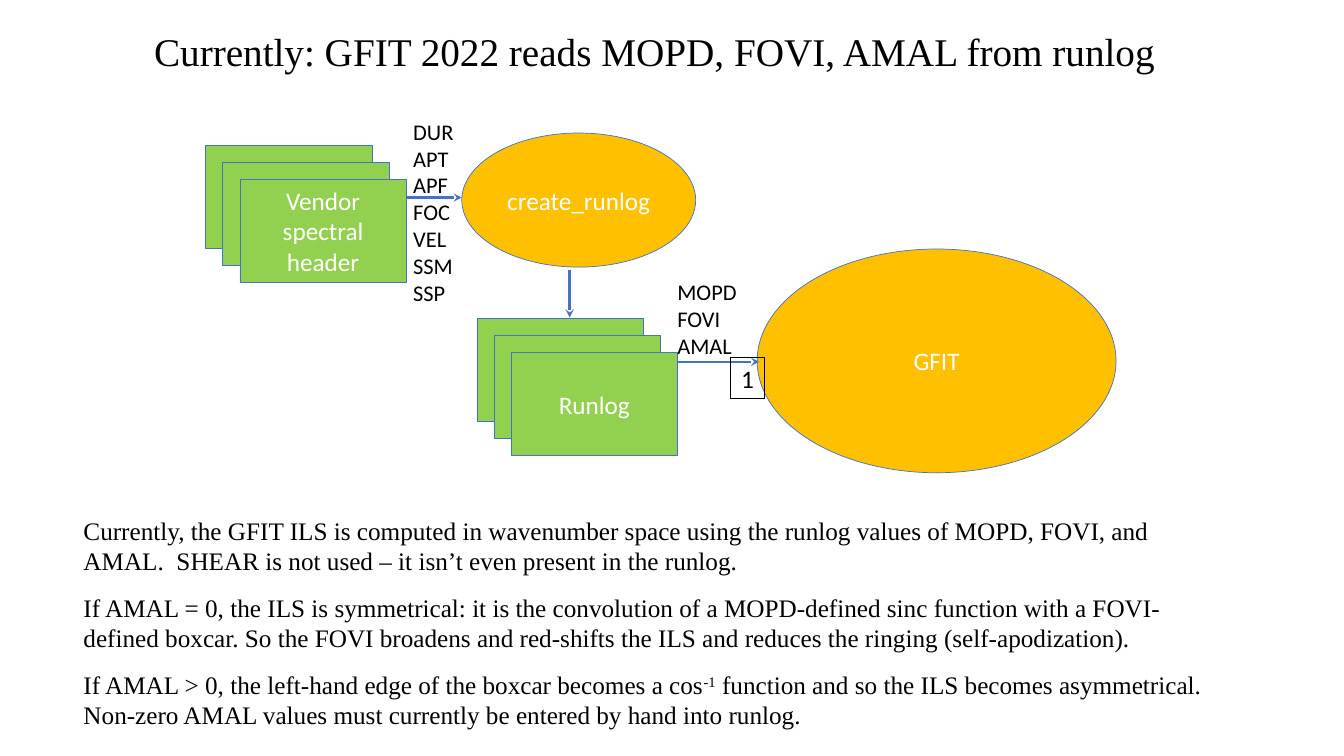
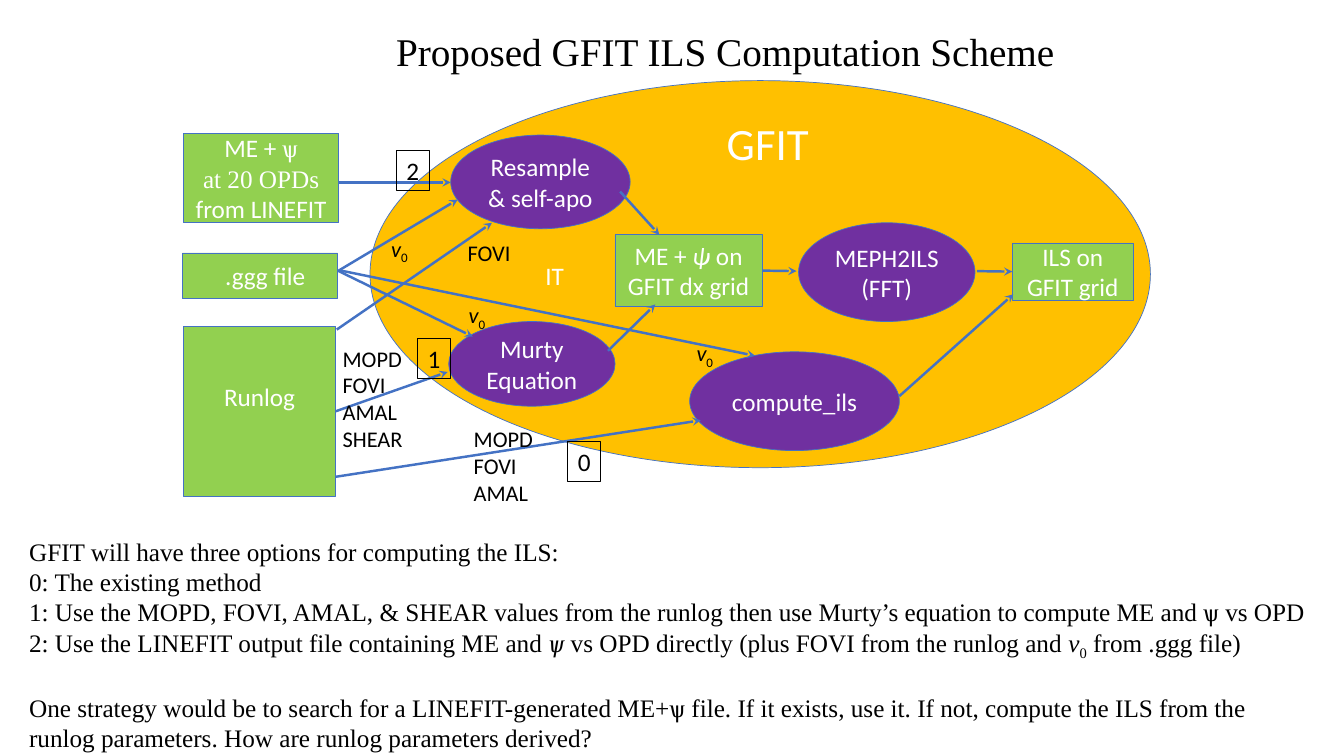
import pptx
import pptx.util
import pptx.dml.color
import pptx.enum.shapes
import pptx.enum.text
import pptx.oxml.ns
from lxml import etree

W, H = 13.33, 7.5
SERIF, SANS = "Times New Roman", "Calibri"
BLACK, WHITE, BLUE = "000000", "FFFFFF", "4472C4"
GREEN, GOLD, PURPLE = "92D050", "FFC000", "7030A0"
TITLE_TOP, TITLE_H = 0.22, 0.57
LABEL_W, LABEL_LINE = 0.81, 0.27
BADGE_W, BADGE_H = 0.33, 0.4
CARD_W, CARD_H, CARD_STEP, CARDS = 1.65, 1.02, 0.17, 3
BASELINES = {"sup": "30000", "sub": "-25000"}

NU = [("v", "i"), ("0", "sub")]

SLIDES = [
    {
        "title": ("Currently: GFIT 2022 reads MOPD, FOVI, AMAL from runlog", 1.43, 10.18),
        "stacks": [
            (2.04, 1.44, ["Vendor spectral header"]),
            (4.73, 3.16, ["Runlog"]),
        ],
        "nodes": {
            "create_runlog": ("oval", GOLD, 4.58, 1.32, 2.32, 1.33, ["create_runlog"]),
            "gfit": ("oval", GOLD, 7.51, 2.47, 3.56, 2.22, ["GFIT"]),
        },
        "arrows": [
            ((4.03, 1.96), (4.58, 1.96)),
            ((5.65, 2.68), (5.65, 3.15)),
            ((6.71, 3.59), (7.53, 3.59)),
        ],
        "labels": [
            (4, 1.12, ["DUR", "APT", "APF", "FOC", "VEL", "SSM", "SSP"]),
            (6.62, 2.71, ["MOPD", "FOVI", "AMAL"]),
        ],
        "captions": [],
        "badges": [("1", 7.25, 3.55)],
        "body": (0.73, 5.06, 11.43, 2.26, [
            (0, ["Currently, the GFIT ILS is computed in wavenumber space using the runlog values of "
                 "MOPD, FOVI, and AMAL.  SHEAR is not used – it isn’t even present in the runlog."]),
            (12, ["If AMAL = 0, the ILS is symmetrical: it is the convolution of a MOPD-defined sinc "
                  "function with a FOVI-defined boxcar. So the FOVI broadens and red-shifts the ILS "
                  "and reduces the ringing (self-apodization)."]),
            (12, ["If AMAL > 0, the left-hand edge of the boxcar becomes a cos", ("-1", "sup"),
                  " function and so the ILS becomes asymmetrical. Non-zero AMAL values must "
                  "currently be entered by hand into runlog."]),
        ]),
    },
    {
        "title": ("Proposed GFIT ILS Computation Scheme", 3.83, 6.8),
        "stacks": [],
        "nodes": {
            "gfit": ("oval", GOLD, 3.67, 0.8, 7.74, 3.84, []),
            "resample": ("oval", PURPLE, 4.47, 1.34, 1.78, 0.93, ["Resample", "& self-apo"]),
            "murty": ("oval", PURPLE, 4.45, 3.19, 1.65, 0.84, ["Murty", "Equation"]),
            "fft": ("oval", PURPLE, 7.92, 2.21, 1.75, 0.98, ["MEPH2ILS", "(FFT)"]),
            "compute_ils": ("oval", PURPLE, 6.84, 3.49, 2.08, 0.98, ["compute_ils"]),
            "linefit": ("box", GREEN, 1.82, 1.32, 1.54, 0.89,
                        [["ME + ", ("ѱ", "serif")], [("at 20 OPDs", "serif"), " from LINEFIT"]]),
            "ggg": ("box", GREEN, 1.81, 2.51, 1.54, 0.45, [".ggg file"], {"left": 0.2}),
            "runlog": ("box", GREEN, 1.82, 3.24, 1.51, 1.68, ["Runlog"], {"bottom": 0.35}),
            "dx_grid": ("box", GREEN, 6.1, 2.33, 1.46, 0.71,
                        [["ME + ", ("ѱ", "i"), " on GFIT dx grid"]]),
            "ils": ("box", GREEN, 10.04, 2.41, 1.2, 0.57, ["ILS on", "GFIT grid"]),
        },
        "arrows": [
            ((3.36, 1.81), (4.47, 1.81)),
            ((3.35, 2.69), (4.54, 1.98)),
            ((3.36, 2.69), (4.69, 3.34)),
            ((3.36, 2.68), (7.49, 3.53)),
            ((3.34, 3.27), (4.88, 2.21)),
            (("runlog", 3), (4.44, 3.69)),
            ((3.33, 4.73), (6.95, 4.17)),
            ((6.15, 1.9), (6.54, 2.33)),
            ((6.03, 3.48), (6.5, 3.02)),
            (("dx_grid", 3), (7.9, 2.69)),
            ((9.69, 2.69), ("ils", 1)),
            ((8.92, 3.93), (10.05, 2.92)),
        ],
        "labels": [
            (3.3, 3.37, ["MOPD", "FOVI", "AMAL", "SHEAR"]),
            (4.6, 4.17, ["MOPD", "FOVI", "AMAL"]),
            (4.54, 2.32, ["FOVI"]),
            (3.78, 2.28, [NU]),
            (4.55, 2.94, [NU]),
            (6.81, 3.32, [NU]),
        ],
        "captions": [("GFIT", 7.11, 1.1, 1.1, 0.64, 32), ("IT", 5.31, 2.53, 0.5, 0.4, 18)],
        "badges": [("2", 3.93, 1.49), ("1", 4.14, 3.36), ("0", 5.63, 4.38)],
        "body": (0.19, 5.27, 12.95, 2.22, [
            (0, ["GFIT will have three options for computing the ILS:"]),
            (0, ["0: The existing method"]),
            (0, ["1: Use the MOPD, FOVI, AMAL, & SHEAR values from the runlog then use Murty’s "
                 "equation to compute ME and ѱ vs OPD"]),
            (0, ["2: Use the LINEFIT output file containing ME and ", ("ѱ", "i"),
                 " vs OPD directly (plus FOVI from the runlog and ", *NU, " from .ggg file)"]),
            (22, ["One strategy would be to search for a LINEFIT-generated ME+ѱ file. If it exists, "
                  "use it. If not, compute the ILS from the runlog parameters. How are runlog "
                  "parameters derived?"]),
        ]),
    },
]


def inch(value):
    return pptx.util.Inches(value)


def rgb(value):
    return pptx.dml.color.RGBColor.from_string(value)


def write(tf, paragraphs, size, font, color, align=None, gaps=None):
    tf.word_wrap = True
    for i, runs in enumerate(paragraphs):
        p = tf.paragraphs[0] if i == 0 else tf.add_paragraph()
        p.alignment = align
        if gaps and gaps[i]:
            p.space_before = pptx.util.Pt(gaps[i])
        for part in [runs] if isinstance(runs, str) else runs:
            text, style = (part, "") if isinstance(part, str) else part
            r = p.add_run()
            r.text = text
            r.font.size = pptx.util.Pt(size)
            r.font.name = SERIF if style == "serif" else font
            r.font.color.rgb = rgb(color)
            if style == "i":
                r.font.italic = True
            if style in BASELINES:
                r._r.get_or_add_rPr().set("baseline", BASELINES[style])


def add_text(s, x, y, w, h, paragraphs, size, font, color, gaps=None):
    tb = s.shapes.add_textbox(inch(x), inch(y), inch(w), inch(h))
    write(tb.text_frame, paragraphs, size, font, color, gaps=gaps)


def add_node(s, kind, fill, x, y, w, h, paragraphs, insets=None,
             line=BLUE, line_width=0.5, color=WHITE):
    shape_type = pptx.enum.shapes.MSO_SHAPE
    preset = shape_type.OVAL if kind == "oval" else shape_type.RECTANGLE
    sp = s.shapes.add_shape(preset, inch(x), inch(y), inch(w), inch(h))
    sp.shadow.inherit = False
    if fill:
        sp.fill.solid()
        sp.fill.fore_color.rgb = rgb(fill)
    else:
        sp.fill.background()
    sp.line.color.rgb = rgb(line)
    sp.line.width = pptx.util.Pt(line_width)
    tf = sp.text_frame
    tf.vertical_anchor = pptx.enum.text.MSO_ANCHOR.MIDDLE
    for side, value in (insets or {}).items():
        setattr(tf, "margin_" + side, inch(value))
    write(tf, paragraphs, 18, SANS, color, pptx.enum.text.PP_ALIGN.CENTER)
    return sp


def add_stack(s, x, y, paragraphs):
    for i in range(CARDS):
        shift = i * CARD_STEP
        add_node(s, "box", GREEN, x + shift, y + shift, CARD_W, CARD_H,
                 paragraphs if i == CARDS - 1 else [])


def add_arrow(s, start, end, nodes):
    points = [(0, 0) if isinstance(e[0], str) else e for e in (start, end)]
    cx = s.shapes.add_connector(pptx.enum.shapes.MSO_CONNECTOR.STRAIGHT,
                                *[inch(v) for point in points for v in point])
    for place, join in ((start, cx.begin_connect), (end, cx.end_connect)):
        if isinstance(place[0], str):
            join(nodes[place[0]], place[1])
    cx.line.color.rgb = rgb(BLUE)
    cx.line.width = pptx.util.Pt(1.75)
    qn = pptx.oxml.ns.qn
    etree.SubElement(cx.line._get_or_add_ln(), qn("a:tailEnd"), type="stealth")
    etree.SubElement(cx._element.spPr, qn("a:effectLst"))


def build(prs, content):
    s = prs.slides.add_slide(prs.slide_layouts[6])
    title, x, w = content["title"]
    add_text(s, x, TITLE_TOP, w, TITLE_H, [title], 28, SERIF, BLACK)
    for stack in content["stacks"]:
        add_stack(s, *stack)
    nodes = {name: add_node(s, *node) for name, node in content["nodes"].items()}
    for start, end in content["arrows"]:
        add_arrow(s, start, end, nodes)
    for x, y, lines in content["labels"]:
        add_text(s, x, y, LABEL_W, 0.1 + LABEL_LINE * len(lines), lines, 16, SANS, BLACK)
    for text, x, y, w, h, size in content["captions"]:
        add_text(s, x, y, w, h, [text], size, SANS, WHITE)
    for digit, x, y in content["badges"]:
        add_node(s, "box", None, x, y, BADGE_W, BADGE_H, [digit], {"left": 0, "right": 0},
                 line=BLACK, line_width=0.75, color=BLACK)
    x, y, w, h, paragraphs = content["body"]
    gaps, texts = zip(*paragraphs)
    add_text(s, x, y, w, h, texts, 18, SERIF, BLACK, gaps)


def main():
    prs = pptx.Presentation()
    prs.slide_width, prs.slide_height = inch(W), inch(H)
    for content in SLIDES:
        build(prs, content)
    prs.save("out.pptx")


if __name__ == "__main__":
    main()
